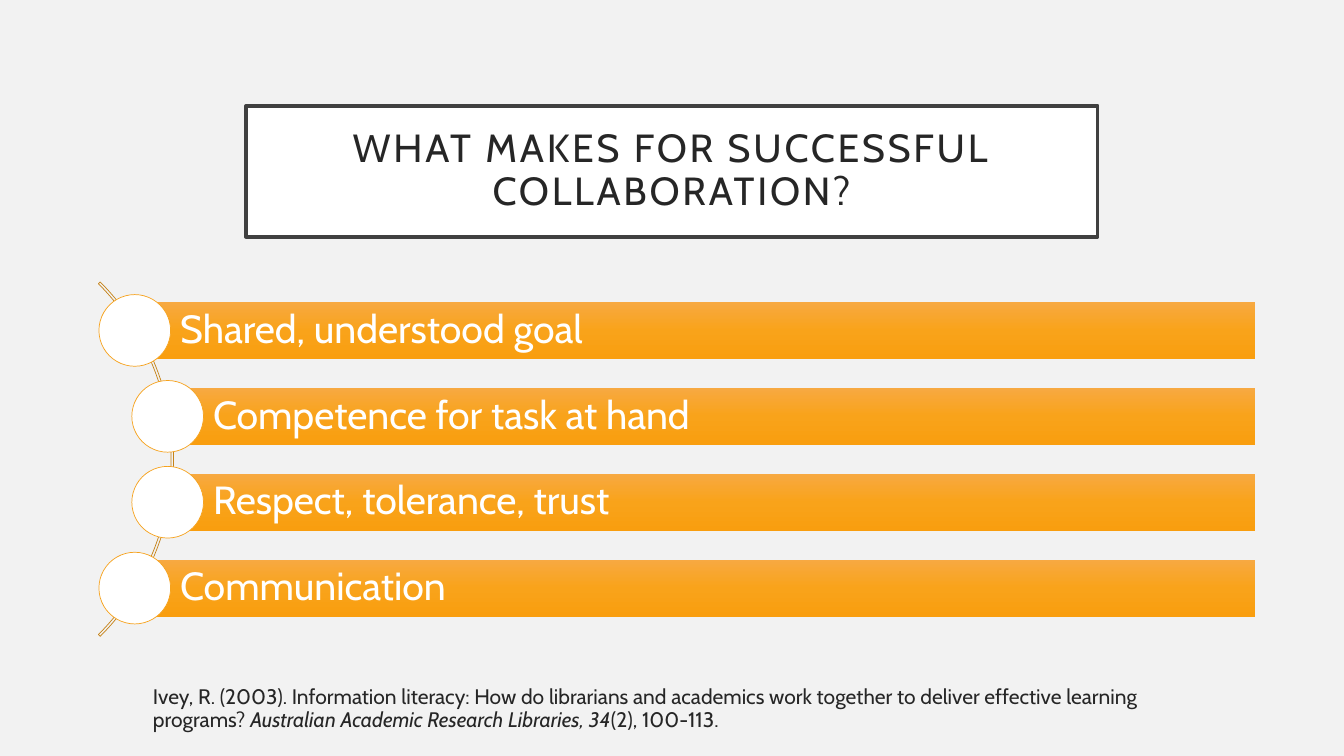
import copy

import pptx
import pptx.dml.color
import pptx.enum.shapes
import pptx.enum.text
import pptx.oxml.ns
import pptx.util

Pt = pptx.util.Pt
RGBColor = pptx.dml.color.RGBColor
SHAPE = pptx.enum.shapes.MSO_SHAPE
ALIGN = pptx.enum.text.PP_ALIGN
ANCHOR = pptx.enum.text.MSO_ANCHOR

FONT = "Cabin"
BACKGROUND = RGBColor(0xF2, 0xF2, 0xF2)
WHITE = RGBColor(0xFF, 0xFF, 0xFF)
INK = RGBColor(0x26, 0x26, 0x26)
TITLE_BORDER = RGBColor(0x40, 0x40, 0x40)
ARC_LINE = RGBColor(0xC5, 0x82, 0x17)
CIRCLE_LINE = RGBColor(0xF6, 0xA2, 0x1D)
BAR_STOPS = (
    (0, RGBColor(0xF7, 0xA9, 0x42)),
    (0.5, RGBColor(0xF9, 0xA3, 0x1A)),
    (1, RGBColor(0xF9, 0x9E, 0x0F)),
)

FACTORS = (
    "Shared, understood goal",
    "Competence for task at hand",
    "Respect, tolerance, trust",
    "Communication",
)
OUTER_LEFT, INNER_LEFT, BAR_RIGHT = 96.3, 119.8, 896.6
FIRST_BAR_TOP, BAR_HEIGHT, BAR_PITCH = 215.6, 40.9, 61.35
CIRCLE_SIZE = 51.2


def add_run(paragraph, text, size, color, italic=False, spacing=0):
    run = paragraph.add_run()
    run.text = text
    run.font.name = FONT
    run.font.size = Pt(size)
    run.font.color.rgb = color
    run.font.italic = italic
    if spacing:
        run.font._element.set("spc", str(spacing * 100))


def set_frame(frame, insets, anchor):
    """Prepare a wrapping text frame; insets run left, top, right, bottom."""
    frame.word_wrap = True
    frame.auto_size = pptx.enum.text.MSO_AUTO_SIZE.NONE
    frame.vertical_anchor = anchor
    (frame.margin_left, frame.margin_top,
     frame.margin_right, frame.margin_bottom) = map(Pt, insets)


def set_paragraph(paragraph, align):
    paragraph.alignment = align
    paragraph.line_spacing = 0.9
    paragraph.space_before = Pt(0)


def set_outline(shape, color, width):
    shape.line.color.rgb = color
    shape.line.width = Pt(width)


def add_plain_shape(slide, kind, left, top, width, height):
    shape = slide.shapes.add_shape(kind, Pt(left), Pt(top), Pt(width), Pt(height))
    shape.shadow.inherit = False
    return shape


def fill_bar_gradient(bar):
    bar.fill.gradient()
    bar.fill.gradient_angle = 270
    stop_list = bar._element.spPr.find(".//" + pptx.oxml.ns.qn("a:gsLst"))
    stop_list.insert(1, copy.deepcopy(stop_list[0]))
    for stop, (position, color) in zip(bar.fill.gradient_stops, BAR_STOPS):
        stop.position = position
        stop.color.rgb = color


def add_title(slide, text):
    title = slide.shapes.title
    title.left, title.top, title.width, title.height = map(Pt, (175.7, 75.6, 608.4, 93.6))
    title.fill.solid()
    title.fill.fore_color.rgb = WHITE
    set_outline(title, TITLE_BORDER, 2.5)
    set_frame(title.text_frame, (14.4,) * 4, ANCHOR.MIDDLE)
    paragraph = title.text_frame.paragraphs[0]
    set_paragraph(paragraph, ALIGN.CENTER)
    add_run(paragraph, text, 28, INK, spacing=2)


def add_arc(slide):
    arc = add_plain_shape(slide, SHAPE.BLOCK_ARC, -234, 149, 358, 358)
    arc.adjustments[0] = 189
    arc.adjustments[1] = 27
    arc.adjustments[2] = 0.005
    arc.fill.background()
    set_outline(arc, ARC_LINE, 0.5)


def add_factor(slide, text, left, top):
    """Add a labelled bar with a circle centred on its left end."""
    bar = add_plain_shape(slide, SHAPE.RECTANGLE, left, top, BAR_RIGHT - left, BAR_HEIGHT)
    fill_bar_gradient(bar)
    bar.line.fill.background()
    set_frame(bar.text_frame, (32.4, 5.8, 5.8, 5.8), ANCHOR.MIDDLE)
    paragraph = bar.text_frame.paragraphs[0]
    set_paragraph(paragraph, ALIGN.LEFT)
    add_run(paragraph, text, 28, WHITE)

    circle = add_plain_shape(
        slide, SHAPE.OVAL, left - CIRCLE_SIZE / 2,
        top + (BAR_HEIGHT - CIRCLE_SIZE) / 2, CIRCLE_SIZE, CIRCLE_SIZE)
    circle.fill.solid()
    circle.fill.fore_color.rgb = WHITE
    set_outline(circle, CIRCLE_LINE, 0.5)


def add_reference(slide):
    reference = slide.shapes.add_textbox(Pt(102.2), Pt(487), Pt(776.2), Pt(44))
    set_frame(reference.text_frame, (7.2, 3.6, 7.2, 3.6), ANCHOR.TOP)
    paragraph = reference.text_frame.paragraphs[0]
    set_paragraph(paragraph, ALIGN.LEFT)
    add_run(paragraph, "Ivey, R. (2003). Information literacy: How do librarians and academics "
            "work together to deliver effective learning programs? ", 15, INK)
    add_run(paragraph, "Australian Academic Research Libraries, 34", 15, INK, italic=True)
    add_run(paragraph, "(2), 100-113.", 15, INK)


def main():
    presentation = pptx.Presentation()
    presentation.slide_width, presentation.slide_height = Pt(960), Pt(540)
    slide = presentation.slides.add_slide(presentation.slide_layouts[5])
    slide.background.fill.solid()
    slide.background.fill.fore_color.rgb = BACKGROUND

    add_title(slide, "WHAT MAKES FOR SUCCESSFUL COLLABORATION?")
    add_reference(slide)
    add_arc(slide)
    for index, factor in enumerate(FACTORS):
        left = OUTER_LEFT if index in (0, len(FACTORS) - 1) else INNER_LEFT
        add_factor(slide, factor, left, FIRST_BAR_TOP + index * BAR_PITCH)
    presentation.save("out.pptx")


if __name__ == "__main__":
    main()
